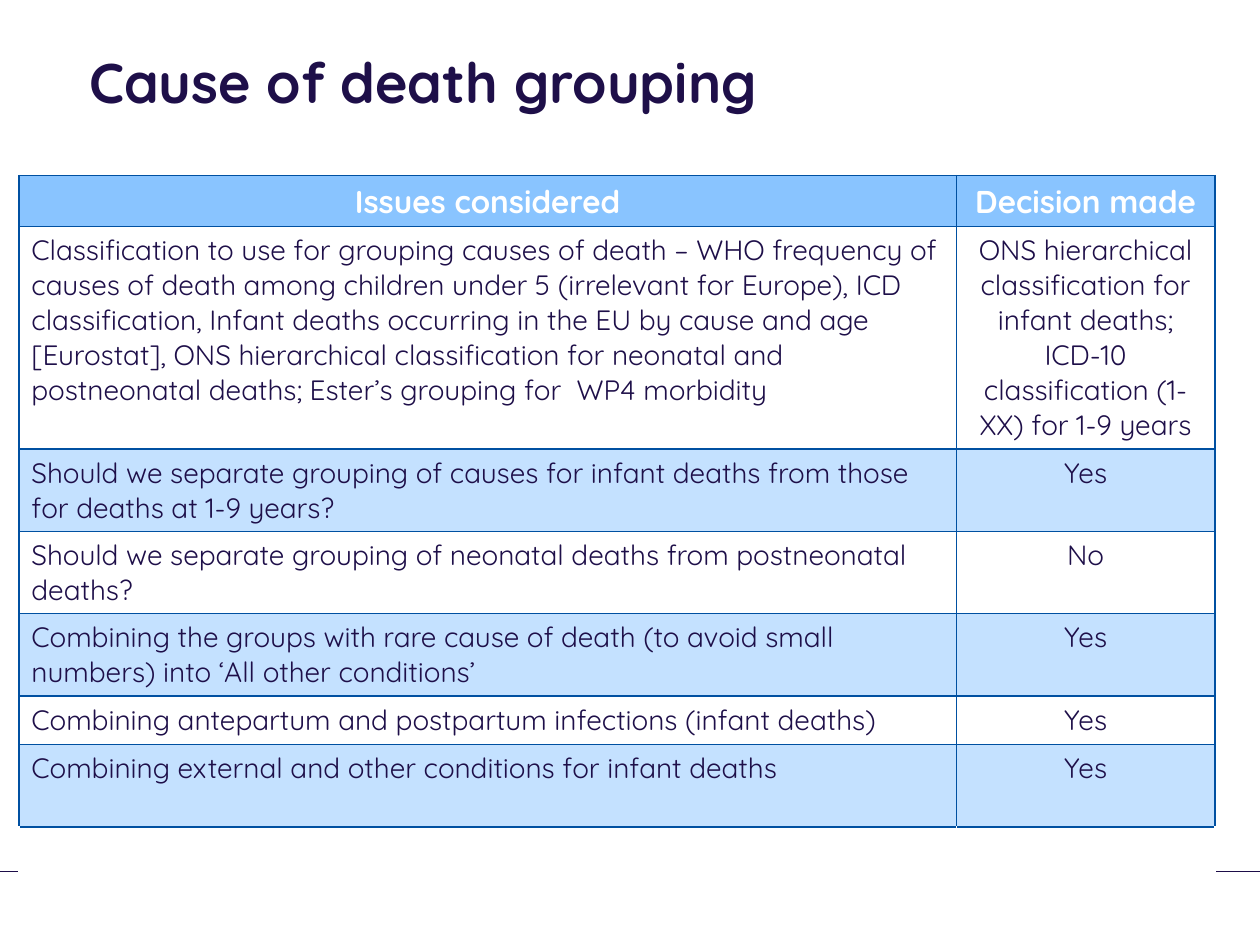
import pptx
import pptx.dml.color
import pptx.enum.shapes
import pptx.enum.text
import pptx.oxml
import pptx.oxml.ns
import pptx.util
from lxml import etree
from pptx.util import Cm

NAVY, BLUE, WHITE = "1E0F49", "0050A1", "FFFFFF"
HEADER, BAND = "89C4FF", "C4E1FF"
CENTER = pptx.enum.text.PP_ALIGN.CENTER
LEFT = pptx.enum.text.PP_ALIGN.LEFT


def color(hex_code):
    return pptx.dml.color.RGBColor.from_string(hex_code)


def write(tf, text, size=16, ink=NAVY, bold=False, align=LEFT):
    """Fill a text frame, one paragraph per line of text."""
    for i, line in enumerate(text.split("\n")):
        p = tf.paragraphs[0] if i == 0 else tf.add_paragraph()
        p.alignment = align
        r = p.add_run()
        r.text = line
        r.font.name = "Quicksand"
        r.font.size = pptx.util.Pt(size)
        r.font.bold = bold
        r.font.color.rgb = color(ink)


def set_borders(cell, **edges):
    """Draw 1 pt cell borders; edges are given as L, R, T, B colours."""
    tcPr = cell._tc.get_or_add_tcPr()
    for i, edge in enumerate("LRTB"):
        ln = pptx.oxml.parse_xml(
            f'<a:ln{edge} {pptx.oxml.ns.nsdecls("a")} w="12700"><a:solidFill>'
            f'<a:srgbClr val="{edges[edge]}"/></a:solidFill></a:ln{edge}>')
        tcPr.insert(i, ln)


class Deck:
    def __init__(self):
        self.prs = pptx.Presentation()
        self.prs.slide_width, self.prs.slide_height = Cm(25.4), Cm(19.05)
        self.s = self.prs.slides.add_slide(self.prs.slide_layouts[6])

    def line(self, x1, y1, x2, y2, ink, width):
        sp = self.s.shapes.add_connector(
            pptx.enum.shapes.MSO_CONNECTOR.STRAIGHT,
            Cm(x1), Cm(y1), Cm(x2), Cm(y2))
        sp.line.color.rgb = color(ink)
        sp.line.width = pptx.util.Pt(width)
        etree.SubElement(sp._element.spPr, pptx.oxml.ns.qn("a:effectLst"))

    def text(self, x, y, w, h, text, **fmt):
        tf = self.s.shapes.add_textbox(Cm(x), Cm(y), Cm(w), Cm(h)).text_frame
        tf.word_wrap = True
        tf.vertical_anchor = pptx.enum.text.MSO_ANCHOR.MIDDLE
        write(tf, text, **fmt)

    def table(self, x, y, widths, heights, rows):
        table = self.s.shapes.add_table(
            len(rows), len(widths), Cm(x), Cm(y),
            Cm(sum(widths)), Cm(sum(heights))).table
        for column, width in zip(table.columns, widths):
            column.width = Cm(width)
        for i, (height, row) in enumerate(zip(heights, rows)):
            table.rows[i].height = Cm(height)
            for j, text in enumerate(row):
                cell = table.cell(i, j)
                cell.fill.solid()
                fill = HEADER if i == 0 else WHITE if i % 2 else BAND
                cell.fill.fore_color.rgb = color(fill)
                # The empty closing row only keeps its top border
                edge = BLUE if text else WHITE
                set_borders(cell, L=edge, R=edge, T=BLUE, B=edge)
                if i == 0:
                    write(cell.text_frame, text, size=18, ink=WHITE,
                          bold=True, align=CENTER)
                elif text:
                    write(cell.text_frame, text, align=CENTER if j else LEFT)


ROWS = [
    ("Issues considered", "Decision made"),
    ("Classification to use for grouping causes of death – WHO frequency of "
     "causes of death among children under 5 (irrelevant for Europe), ICD "
     "classification, Infant deaths occurring in the EU by cause and age "
     "[Eurostat], ONS hierarchical classification for neonatal and "
     "postneonatal deaths; Ester’s grouping for  WP4 morbidity",
     "ONS hierarchical classification for infant deaths;\n"
     "ICD-10 classification (1-XX) for 1-9 years"),
    ("Should we separate grouping of causes for infant deaths from those "
     "for deaths at 1-9 years?", "Yes"),
    ("Should we separate grouping of neonatal deaths from postneonatal "
     "deaths?", "No"),
    ("Combining the groups with rare cause of death (to avoid small "
     "numbers) into ‘All other conditions’", "Yes"),
    ("Combining antepartum and postpartum infections (infant deaths)", "Yes"),
    ("Combining external and other conditions for infant deaths", "Yes"),
    ("", ""),
]


def main():
    deck = Deck()
    # Footer rule
    deck.line(0, 17.57, 25.4, 17.57, "1D0D49", 0.25)
    # Title
    deck.text(1.55, 0.74, 20.98, 1.8, "Cause of death grouping",
              size=32, bold=True)
    # Issues and decisions
    deck.table(0.38, 3.54, [18.9, 5.21],
               [1.03, 4.48, 1.66, 1.66, 1.66, 0.98, 1.66, 1], ROWS)
    deck.prs.save("out.pptx")


if __name__ == "__main__":
    main()
